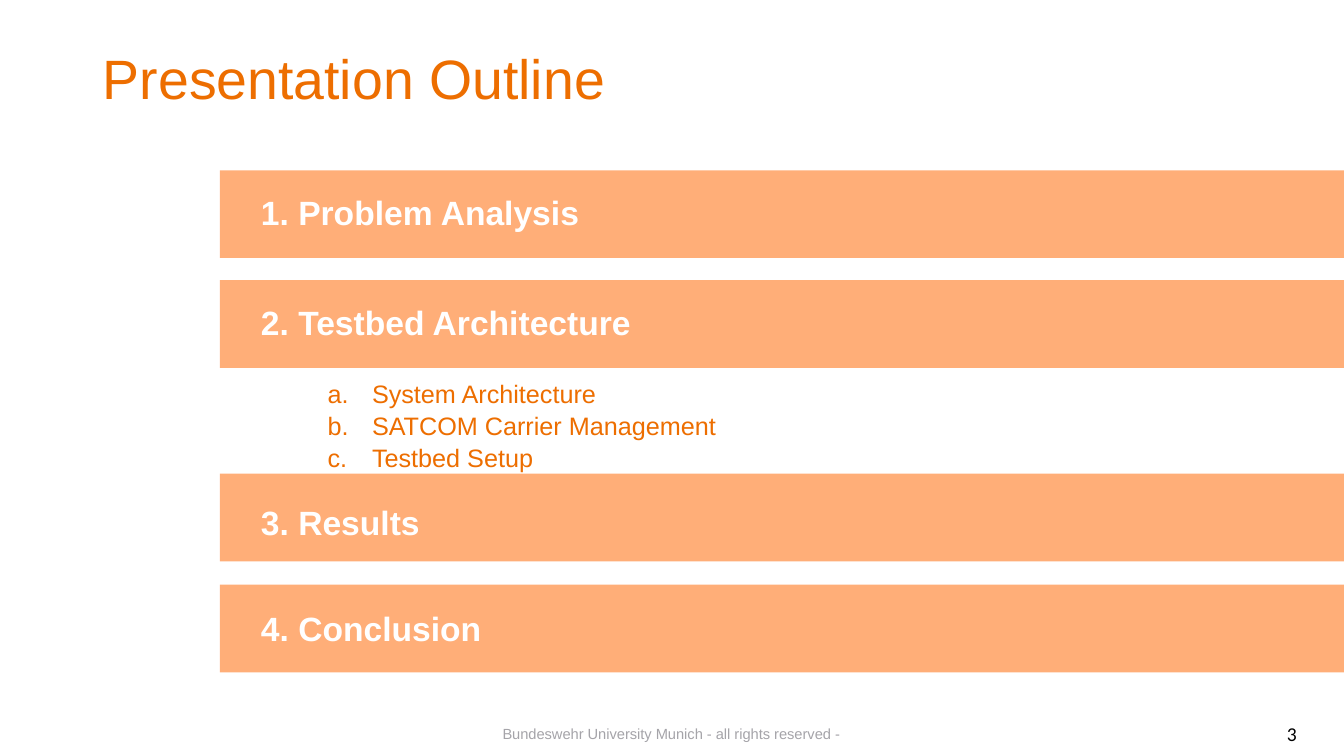
import lxml.etree
import pptx
import pptx.dml.color
import pptx.enum.shapes
import pptx.enum.text
import pptx.oxml.ns
import pptx.util

Inches = pptx.util.Inches
ALIGN = pptx.enum.text.PP_ALIGN
ANCHOR = pptx.enum.text.MSO_ANCHOR

COLORS = {
    "accent": "ED6E00",
    "bar": "FF6600",
    "heading": "FFFFFF",
    "footer": "A5A4A9",
    "number": "000000",
}
BAR_OPACITY = 53  # percent

# Heading, top of its bar, distance from bar top to heading box
SECTIONS = [
    ("1. Problem Analysis", 1.69, 0.16),
    ("2. Testbed Architecture", 2.78, 0.17),
    ("3. Results", 4.7, 0.23),
    ("4. Conclusion", 5.8, 0.18),
]
SUBTOPICS = ["System Architecture", "SATCOM Carrier Management", "Testbed Setup"]


def rgb(name):
    return pptx.dml.color.RGBColor.from_string(COLORS[name])


def add_element(parent, tag, **attributes):
    lxml.etree.SubElement(parent, pptx.oxml.ns.qn(tag), attributes)


def place(shape, box):
    shape.left, shape.top, shape.width, shape.height = map(Inches, box)


def write_text(shape, lines, size, color, font="Arial", bold=False,
               align=ALIGN.LEFT, anchor=ANCHOR.TOP, spacing=1.0):
    """Fill a shape with one paragraph per line and return the paragraphs."""
    frame = shape.text_frame
    frame.text = "\n".join(lines)
    frame.word_wrap = True
    frame.auto_size = pptx.enum.text.MSO_AUTO_SIZE.NONE
    frame.vertical_anchor = anchor
    for paragraph in frame.paragraphs:
        paragraph.alignment = align
        paragraph.line_spacing = spacing
        paragraph.space_before = pptx.util.Pt(0)
        for run in paragraph.runs:
            run.font.size = pptx.util.Pt(size)
            run.font.name = font
            run.font.bold = bold
            run.font.color.rgb = rgb(color)
    return frame.paragraphs


def add_text(slide, box, text, **text_format):
    write_text(slide.shapes.add_textbox(*map(Inches, box)), [text], **text_format)


def add_title(slide, box):
    place(slide.shapes.title, box)
    write_text(slide.shapes.title, ["Presentation Outline"], size=39.6,
               color="accent", anchor=ANCHOR.MIDDLE)


def add_section(slide, box, heading, heading_offset):
    left, top, width, height = box
    # Translucent bar
    bar = slide.shapes.add_shape(
        pptx.enum.shapes.MSO_SHAPE.RECTANGLE, *map(Inches, box))
    bar.shadow.inherit = False
    bar.fill.solid()
    bar.fill.fore_color.rgb = rgb("bar")
    bar.line.fill.background()
    fill_color = bar._element.spPr.find(".//" + pptx.oxml.ns.qn("a:srgbClr"))
    add_element(fill_color, "a:alpha", val=str(BAR_OPACITY * 1000))
    # Heading
    add_text(slide, (left + 0.31, top + heading_offset, 6.06, 0.5), heading,
             size=24, color="heading", bold=True)


def add_subtopics(slide, box):
    body = slide.placeholders[1]
    place(body, box)
    paragraphs = write_text(body, SUBTOPICS, size=18, color="accent", spacing=1.05)
    # Lettered list with hanging indent
    for paragraph in paragraphs:
        paragraph.level = 1
        properties = paragraph._p.get_or_add_pPr()
        properties.set("marL", str(Inches(0.88)))
        properties.set("indent", str(Inches(-0.44)))
        add_element(properties, "a:buFont", typeface="Arial")
        add_element(properties, "a:buAutoNum", type="alphaLcPeriod")


def add_footer(slide, box):
    left, top, width, height = box
    add_text(slide, (left, top, 4.72, height),
             "Bundeswehr University Munich - all rights reserved -",
             size=10.5, color="footer", align=ALIGN.CENTER, anchor=ANCHOR.MIDDLE)
    add_text(slide, (left + width - 2.62, top, 2.62, height), "3", size=14,
             color="number", font="Calibri", align=ALIGN.RIGHT,
             anchor=ANCHOR.MIDDLE)


def build_outline_slide(presentation):
    slide = presentation.slides.add_slide(presentation.slide_layouts[1])
    add_title(slide, (0.92, 0.39, 11.5, 0.76))
    for heading, top, heading_offset in SECTIONS:
        add_section(slide, (2.18, top, 11.15, 0.87), heading, heading_offset)
    add_subtopics(slide, (2.71, 3.69, 5.62, 1.41))
    add_footer(slide, (4.3, 7.14, 8.66, 0.28))


def main():
    presentation = pptx.Presentation()
    presentation.slide_width = Inches(13.33)
    presentation.slide_height = Inches(7.5)
    build_outline_slide(presentation)
    presentation.save("out.pptx")


if __name__ == "__main__":
    main()
